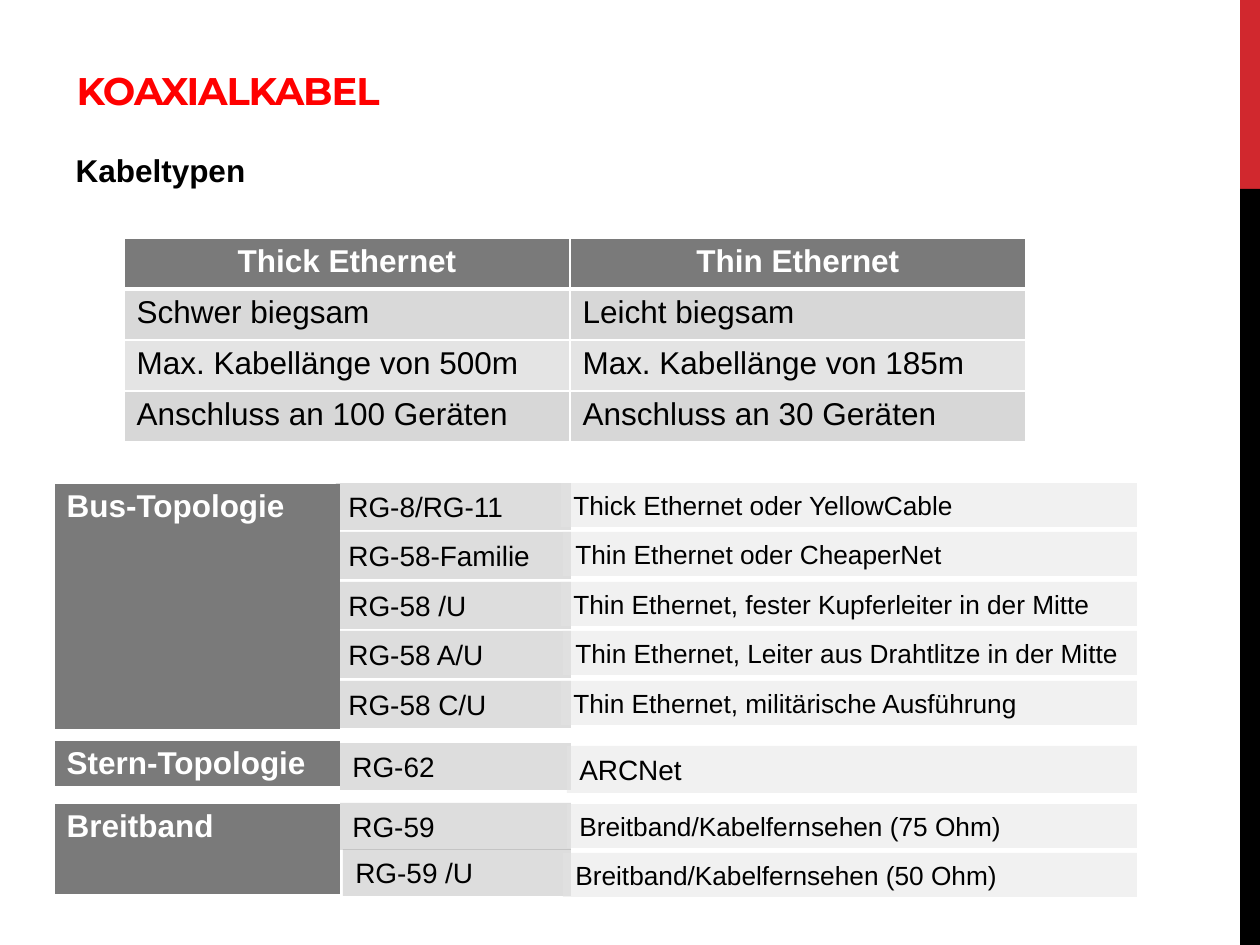
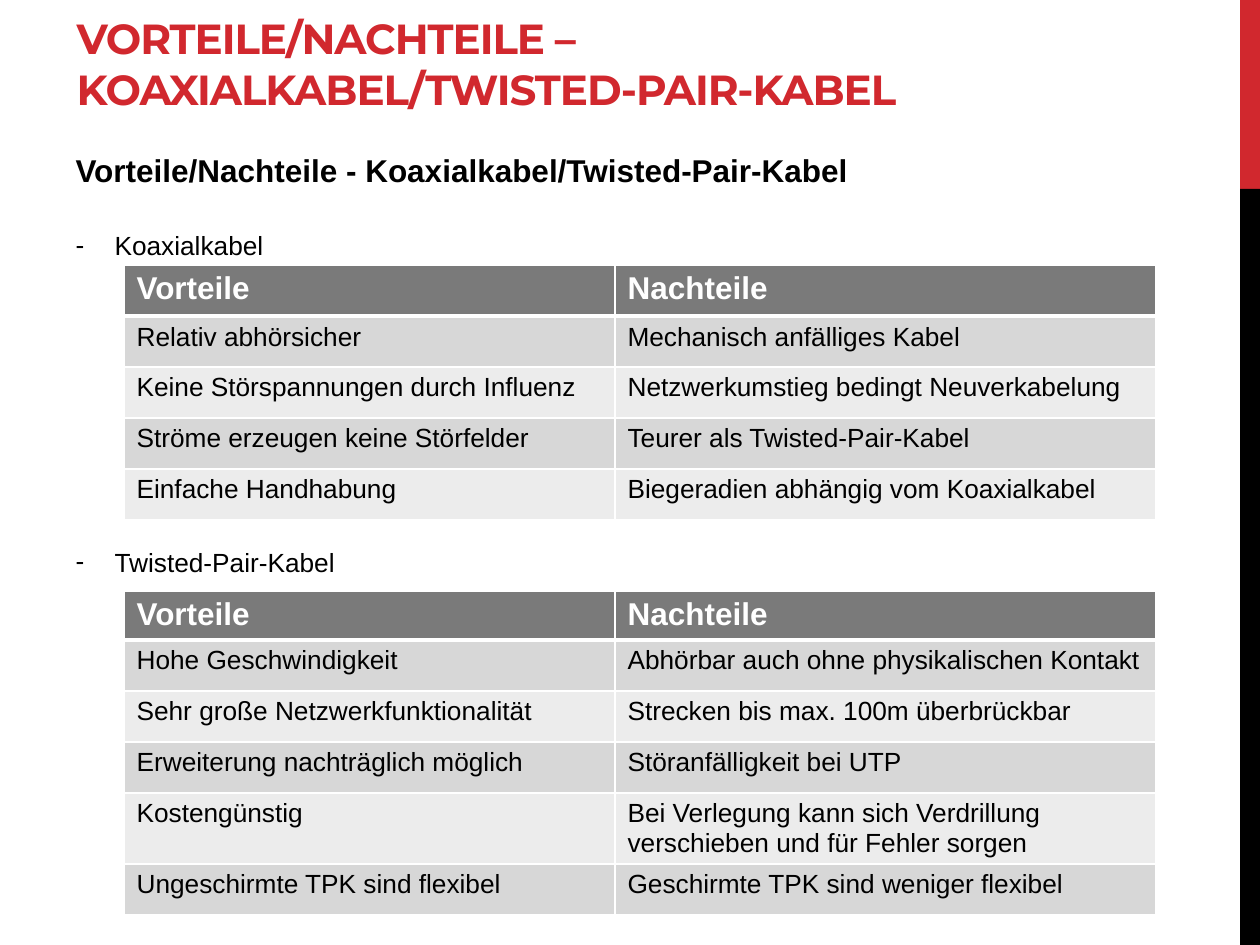
from lxml.etree import SubElement
from pptx import Presentation
from pptx.dml.color import RGBColor
from pptx.enum.shapes import MSO_SHAPE
from pptx.enum.text import MSO_ANCHOR, MSO_AUTO_SIZE, PP_ALIGN
from pptx.oxml.ns import qn
from pptx.util import Emu, Pt

PX_PER_INCH = 126
BODY_FONT, TITLE_FONT = "Arial", "Montserrat"

BLACK = RGBColor(0x00, 0x00, 0x00)
WHITE = RGBColor(0xFF, 0xFF, 0xFF)
BAND_RED = RGBColor(0xD1, 0x28, 0x2E)
BRIGHT_RED = RGBColor(0xFF, 0x00, 0x00)
HEADER_GREY = RGBColor(0x7A, 0x7A, 0x7A)
FIRST_CELL_GREY = RGBColor(0xD9, 0xD9, 0xD9)
DARK_ROW = RGBColor(0xD7, 0xD7, 0xD7)
MIDDLE_ROW = RGBColor(0xE4, 0xE4, 0xE4)
LIGHT_ROW = RGBColor(0xEC, 0xEC, 0xEC)

# Left, top, width, height in px
TITLE_BOX = (64, 45, 1160, 75)
BODY_BOX = (63, 145, 1102, 725)
BANDS = [((1240, 0, 20, 189), BAND_RED), ((1240, 189, 20, 756), BLACK)]
TABLE_LEFT = 124
ROW_HEIGHT = 51

ETHERNET_TYPES = [
    ("Thick Ethernet", "Thin Ethernet"),
    ("Schwer biegsam", "Leicht biegsam"),
    ("Max. Kabellänge von 500m", "Max. Kabellänge von 185m"),
    ("Anschluss an 100 Geräten", "Anschluss an 30 Geräten"),
]

# Name, top, height
TOPOLOGIES = [
    ("Bus-Topologie", 483, 248),
    ("Stern-Topologie", 740, 47),
    ("Breitband", 803, 93),
]
TOPOLOGY_LEFT, TOPOLOGY_WIDTH = 54, 287

# Cable, left, top; description, left, top, text size
CABLES = [
    ("RG-8/RG-11", 336, 483, "Thick Ethernet oder YellowCable", 561, 483, 15),
    ("RG-58-Familie", 336, 532, "Thin Ethernet oder CheaperNet", 563, 532, 15),
    ("RG-58 /U", 336, 582, "Thin Ethernet, fester Kupferleiter in der Mitte", 561, 582, 15),
    ("RG-58 A/U", 336, 631, "Thin Ethernet, Leiter aus Drahtlitze in der Mitte", 563, 631, 15),
    ("RG-58 C/U", 336, 681, "Thin Ethernet, militärische Ausführung", 561, 681, 15),
    ("RG-62", 340, 743, "ARCNet", 567, 746, 16),
    ("RG-59", 340, 803, "Breitband/Kabelfernsehen (75 Ohm)", 567, 804, 15),
    ("RG-59 /U", 343, 849, "Breitband/Kabelfernsehen (50 Ohm)", 563, 853, 15),
]
CABLE_RIGHT, DESCRIPTION_RIGHT = 571, 1137
LABEL_HEIGHTS = {15: 44, 16: 47}

PROS_AND_CONS = ("Vorteile", "Nachteile")
COAXIAL = [
    PROS_AND_CONS,
    ("Relativ abhörsicher", "Mechanisch anfälliges Kabel"),
    ("Keine Störspannungen durch Influenz", "Netzwerkumstieg bedingt Neuverkabelung"),
    ("Ströme erzeugen keine Störfelder", "Teurer als Twisted-Pair-Kabel"),
    ("Einfache Handhabung", "Biegeradien abhängig vom Koaxialkabel"),
]
TWISTED_PAIR = [
    PROS_AND_CONS,
    ("Hohe Geschwindigkeit", "Abhörbar auch ohne physikalischen Kontakt"),
    ("Sehr große Netzwerkfunktionalität", "Strecken bis max. 100m überbrückbar"),
    ("Erweiterung nachträglich möglich", "Störanfälligkeit bei UTP"),
    ("Kostengünstig", "Bei Verlegung kann sich Verdrillung verschieben und für Fehler sorgen"),
    ("Ungeschirmte TPK sind flexibel", "Geschirmte TPK sind weniger flexibel"),
]
COMPARISON_COLUMNS = (491, 541)


def px(length):
    return Emu(round(length * 914400 / PX_PER_INCH))


def place(shape, box):
    shape.left, shape.top, shape.width, shape.height = map(px, box)


def format_runs(paragraph, size, color=BLACK, bold=False, font=BODY_FONT):
    for run in paragraph.runs:
        run.font.name = font
        run.font.size = Pt(size)
        run.font.bold = bold
        run.font.color.rgb = color


def add_rectangle(slide, box, color, opacity=100):
    shape = slide.shapes.add_shape(MSO_SHAPE.RECTANGLE, *map(px, box))
    shape.shadow.inherit = False
    shape.line.fill.background()
    shape.fill.solid()
    shape.fill.fore_color.rgb = color
    if opacity < 100:
        color_element = shape.element.spPr.find(qn("a:solidFill")).find(qn("a:srgbClr"))
        SubElement(color_element, qn("a:alpha")).set("val", str(opacity * 1000))
    return shape


def add_label(slide, text, box, size, color, opacity):
    shape = add_rectangle(slide, box, color, opacity)
    frame = shape.text_frame
    frame.word_wrap = True
    frame.vertical_anchor = MSO_ANCHOR.TOP
    frame.text = text
    frame.paragraphs[0].alignment = PP_ALIGN.LEFT
    format_runs(frame.paragraphs[0], size)


def set_borders(cell, top=1, bottom=1):
    properties = cell._tc.get_or_add_tcPr()
    for side, points in (("L", 1), ("R", 1), ("T", top), ("B", bottom)):
        line = SubElement(properties, qn(f"a:ln{side}"), w=str(Pt(points)))
        fill = SubElement(line, qn("a:solidFill"))
        SubElement(fill, qn("a:srgbClr"), val=str(WHITE))


def add_grid(slide, rows, left, top, widths, heights, size=18,
             body_fills=(DARK_ROW, LIGHT_ROW), header_alignment=PP_ALIGN.LEFT):
    """Add a table whose first row is a dark header above alternating rows."""
    frame = slide.shapes.add_table(len(rows), len(widths), px(left), px(top),
                                   px(sum(widths)), px(sum(heights)))
    table = frame.table
    table.horz_banding = False
    for column, width in zip(table.columns, widths):
        column.width = px(width)
    for index, (texts, height) in enumerate(zip(rows, heights)):
        table.rows[index].height = px(height)
        is_header = index == 0
        for cell, text in zip(table.rows[index].cells, texts):
            set_borders(cell, top=3 if index == 1 else 1, bottom=3 if is_header else 1)
            cell.fill.solid()
            cell.fill.fore_color.rgb = HEADER_GREY if is_header else body_fills[(index - 1) % 2]
            cell.text = text
            paragraph = cell.text_frame.paragraphs[0]
            if is_header:
                paragraph.alignment = header_alignment
                format_runs(paragraph, 18, WHITE, bold=True)
            else:
                format_runs(paragraph, size)
    return table


def add_bands(presentation, slide):
    """Draw the side bands and move them to the slide master."""
    master_tree = presentation.slide_master.shapes.element
    for position, (box, color) in enumerate(BANDS, start=2):
        master_tree.insert(position, add_rectangle(slide, box, color).element)


def set_bullet(paragraph, character=None):
    properties = paragraph._p.get_or_add_pPr()
    indent = px(39) if character else 0
    properties.set("marL", str(indent))
    properties.set("indent", str(-indent))
    if character:
        SubElement(properties, qn("a:buChar"), char=character)
    else:
        SubElement(properties, qn("a:buNone"))


def add_slide(presentation, title, title_size, title_color, heading, items=()):
    """Add a slide with title, bold heading and (text, space before) list items."""
    slide = presentation.slides.add_slide(presentation.slide_layouts[1])
    title_shape, body = slide.shapes.title, slide.placeholders[1]
    place(title_shape, TITLE_BOX)
    place(body, BODY_BOX)
    for shape, anchor in ((title_shape, MSO_ANCHOR.BOTTOM), (body, MSO_ANCHOR.TOP)):
        shape.text_frame.auto_size = MSO_AUTO_SIZE.NONE
        shape.text_frame.vertical_anchor = anchor

    title_shape.text_frame.text = title
    paragraph = title_shape.text_frame.paragraphs[0]
    paragraph.alignment = PP_ALIGN.LEFT
    format_runs(paragraph, title_size, title_color, bold=True, font=TITLE_FONT)
    for run in paragraph.runs:
        run._r.get_or_add_rPr().set("spc", "-60")

    body.text_frame.text = heading
    paragraph = body.text_frame.paragraphs[0]
    paragraph.space_before = Pt(1)
    set_bullet(paragraph)
    format_runs(paragraph, 18, bold=True)
    for text, space_before in items:
        paragraph = body.text_frame.add_paragraph()
        paragraph.text = text
        paragraph.space_before = Pt(space_before)
        set_bullet(paragraph, "-")
        format_runs(paragraph, 15)
    return slide


def build_cable_types(presentation):
    slide = add_slide(presentation, "KOAXIALKABEL", 22, BRIGHT_RED, "Kabeltypen")
    add_bands(presentation, slide)
    table = add_grid(slide, ETHERNET_TYPES, TABLE_LEFT, 238, (446, 456),
                     [ROW_HEIGHT] * len(ETHERNET_TYPES),
                     body_fills=(DARK_ROW, MIDDLE_ROW), header_alignment=PP_ALIGN.CENTER)
    table.cell(1, 0).fill.fore_color.rgb = FIRST_CELL_GREY
    for name, top, height in TOPOLOGIES:
        add_grid(slide, [(name,)], TOPOLOGY_LEFT, top, (TOPOLOGY_WIDTH,), (height,))
    for cable, left, top, description, text_left, text_top, size in CABLES:
        add_label(slide, cable, (left, top, CABLE_RIGHT - left, LABEL_HEIGHTS[16]),
                  16, HEADER_GREY, 25)
        add_label(slide, description,
                  (text_left, text_top, DESCRIPTION_RIGHT - text_left, LABEL_HEIGHTS[size]),
                  size, MIDDLE_ROW, 50)


def build_comparison(presentation):
    slide = add_slide(presentation, "VORTEILE/NACHTEILE – \vKOAXIALKABEL/TWISTED-PAIR-KABEL",
                      24, BAND_RED, "Vorteile/Nachteile - Koaxialkabel/Twisted-Pair-Kabel",
                      [("Koaxialkabel", 23), ("Twisted-Pair-Kabel", 163)])
    add_grid(slide, COAXIAL, TABLE_LEFT, 265, COMPARISON_COLUMNS,
             [ROW_HEIGHT] * len(COAXIAL), size=15)
    add_grid(slide, TWISTED_PAIR, TABLE_LEFT, 591, COMPARISON_COLUMNS,
             [49, ROW_HEIGHT, ROW_HEIGHT, ROW_HEIGHT, 70, ROW_HEIGHT], size=15)


def main():
    presentation = Presentation()
    presentation.slide_width, presentation.slide_height = px(1260), px(945)
    build_cable_types(presentation)
    build_comparison(presentation)
    presentation.save("out.pptx")


if __name__ == "__main__":
    main()
